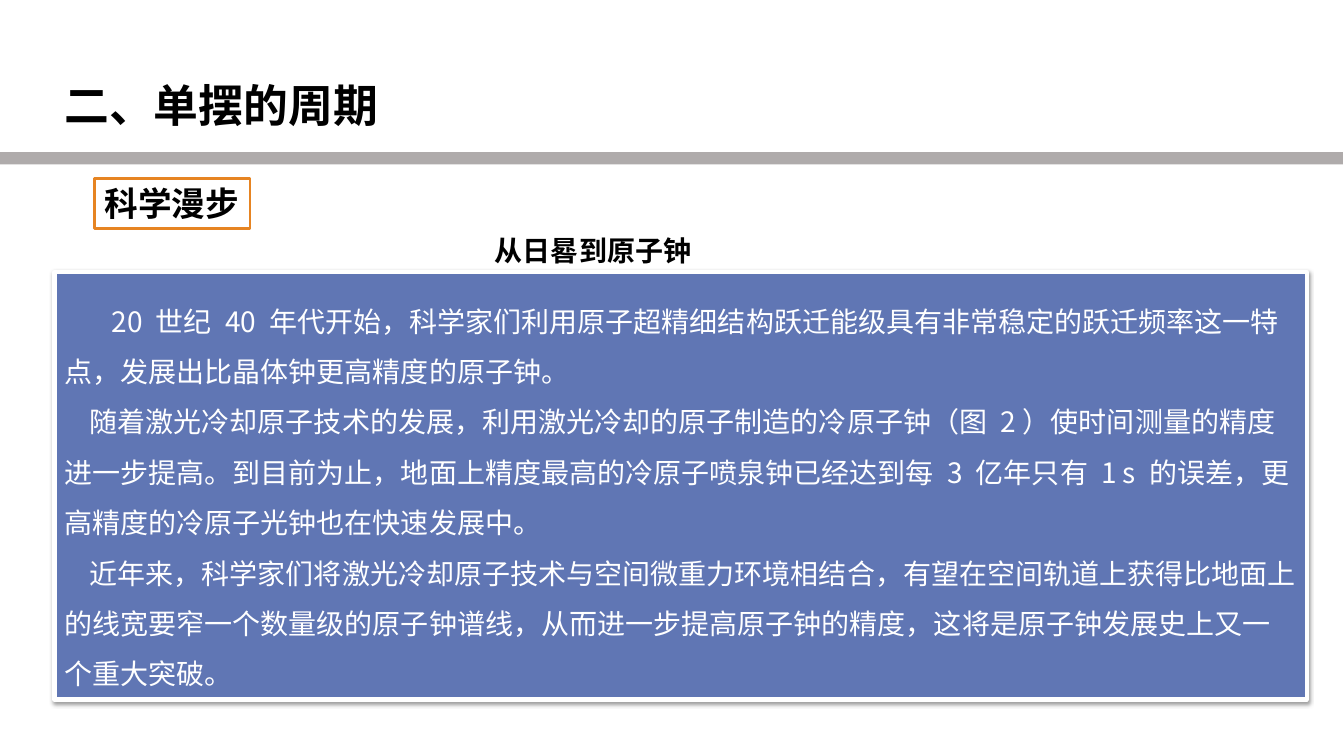
"""Build the slide on the pendulum period and the atomic clock."""
import dataclasses
import typing

import lxml.etree
import pptx
import pptx.dml.color
import pptx.enum.shapes
import pptx.enum.text
import pptx.oxml.ns
import pptx.util

Inches = pptx.util.Inches
Pt = pptx.util.Pt
Anchor = pptx.enum.text.MSO_ANCHOR
qn = pptx.oxml.ns.qn

FONT = "Noto Sans CJK SC"
COLORS = {"black": "000000", "white": "FFFFFF", "bar": "AFABAB",
          "panel": "6076B4", "label": "E68422"}


@dataclasses.dataclass(frozen=True)
class Paragraph:
    text: str
    indent: float = 0


@dataclasses.dataclass(frozen=True)
class Block:
    area: tuple[float, float, float, float]
    paragraphs: tuple[Paragraph, ...] = ()
    size: int = 20
    color: str = "black"
    bold: bool = True
    spacing: float = 1
    fill: typing.Optional[str] = None
    line: typing.Optional[str] = None
    line_width: float = 0
    anchor: Anchor = Anchor.TOP
    bottom_margin: float = 0.05
    wrap: bool = True
    shadow: bool = False


DIVIDER = Block((0, 1.51, 13.32, 0.12), fill="bar")
TITLE = Block((0.54, 0.72, 5.4, 0.64), (Paragraph("二、单摆的周期"),), size=32)
STORY = Block((0.54, 2.7, 12.42, 4.24), (
    Paragraph("20 世纪 40 年代开始，科学家们利用原子超精细结构跃迁能级具有非常稳定的"
              "跃迁频率这一特点，发展出比晶体钟更高精度的原子钟。", 0.47),
    Paragraph("随着激光冷却原子技术的发展，利用激光冷却的原子制造的冷原子钟（图 2）使"
              "时间测量的精度进一步提高。到目前为止，地面上精度最高的冷原子喷泉钟已经达到"
              "每 3 亿年只有 1 s 的误差，更高精度的冷原子光钟也在快速发展中。", 0.25),
    Paragraph("近年来，科学家们将激光冷却原子技术与空间微重力环境相结合，有望在空间轨道上"
              "获得比地面上的线宽要窄一个数量级的原子钟谱线，从而进一步提高原子钟的精度，"
              "这将是原子钟发展史上又一个重大突破。", 0.25),
), color="white", bold=False, spacing=1.5, fill="panel", line="white",
    line_width=3, anchor=Anchor.BOTTOM, bottom_margin=0.09, shadow=True)
SECTION_LABEL = Block((0.94, 1.77, 1.54, 0.5), (Paragraph("科学漫步"),), size=24,
                      fill="white", line="label", line_width=2, wrap=False)
STORY_HEADING = Block((4.81, 2.27, 2.78, 0.44), (Paragraph("从日晷到原子钟"),))


def rgb(name: str) -> pptx.dml.color.RGBColor:
    return pptx.dml.color.RGBColor.from_string(COLORS[name])


def add_shadow(box: typing.Any) -> None:
    effects = box._element.spPr.find(qn("a:effectLst"))
    shadow = lxml.etree.SubElement(
        effects, qn("a:outerShdw"), blurRad=str(Pt(3.1)), dist=str(Pt(1.6)),
        dir="5400000", rotWithShape="0")
    color = lxml.etree.SubElement(shadow, qn("a:srgbClr"), val=COLORS["black"])
    lxml.etree.SubElement(color, qn("a:alpha"), val="38000")


def write_text(box: typing.Any, block: Block) -> None:
    frame = box.text_frame
    frame.word_wrap = block.wrap
    frame.vertical_anchor = block.anchor
    frame.margin_bottom = Inches(block.bottom_margin)
    for index, paragraph in enumerate(block.paragraphs):
        para = frame.add_paragraph() if index else frame.paragraphs[0]
        para.alignment = pptx.enum.text.PP_ALIGN.LEFT
        para.line_spacing = block.spacing
        if paragraph.indent:
            para._p.get_or_add_pPr().set("indent", str(Inches(paragraph.indent)))
        span = para.add_run()
        span.text = paragraph.text
        span.font.name = FONT
        span.font.size = Pt(block.size)
        span.font.bold = block.bold
        span.font.color.rgb = rgb(block.color)
        lxml.etree.SubElement(span._r.rPr, qn("a:ea"), typeface=FONT)


def add_block(page: typing.Any, block: Block) -> None:
    area = [Inches(length) for length in block.area]
    if block.fill:
        box = page.shapes.add_shape(pptx.enum.shapes.MSO_SHAPE.RECTANGLE, *area)
        box.shadow.inherit = False
        box.fill.solid()
        box.fill.fore_color.rgb = rgb(block.fill)
        if block.line:
            box.line.color.rgb = rgb(block.line)
            box.line.width = Pt(block.line_width)
        else:
            box.line.fill.background()
    else:
        box = page.shapes.add_textbox(*area)
    if block.shadow:
        add_shadow(box)
    if block.paragraphs:
        write_text(box, block)


def main() -> None:
    deck = pptx.Presentation()
    deck.slide_width = Inches(13.33)
    deck.slide_height = Inches(7.5)
    page = deck.slides.add_slide(deck.slide_layouts[6])
    for block in (DIVIDER, TITLE, STORY, SECTION_LABEL, STORY_HEADING):
        add_block(page, block)
    deck.save("out.pptx")


if __name__ == "__main__":
    main()
